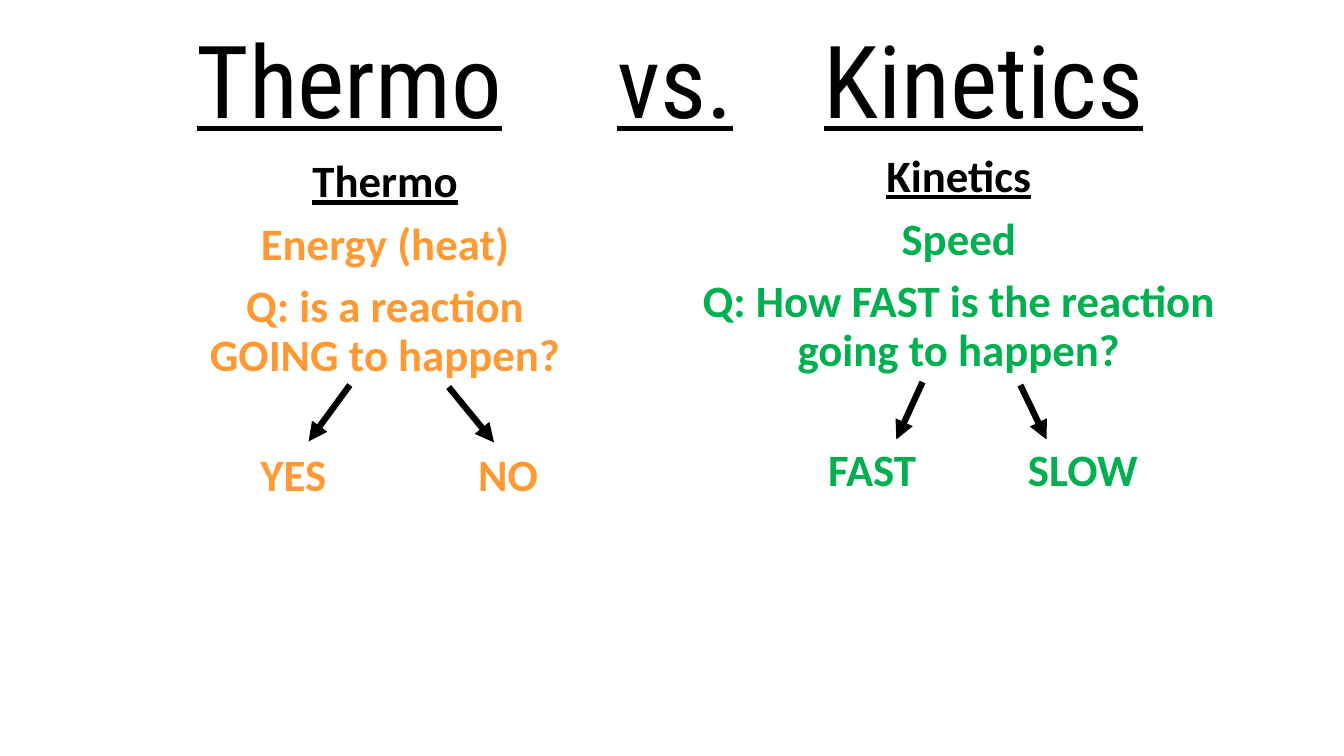
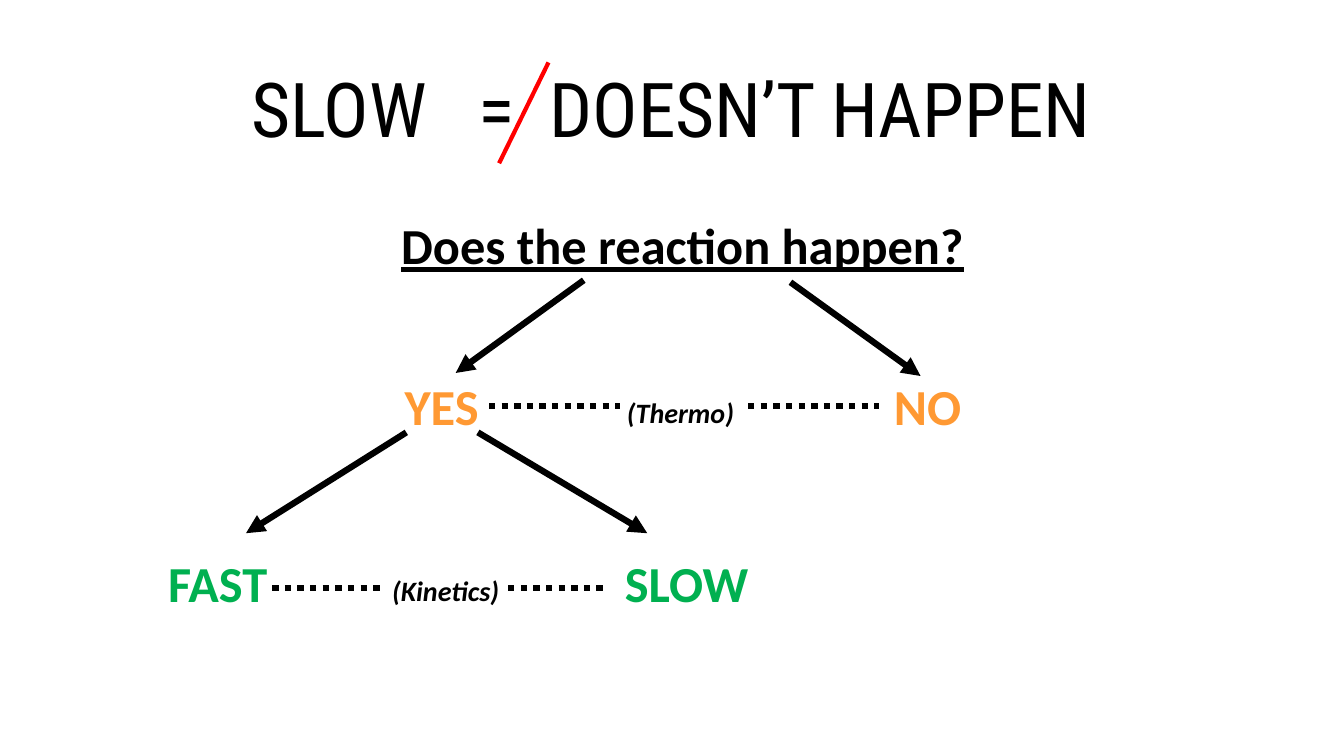
from dataclasses import dataclass

from lxml import etree
from pptx import Presentation
from pptx.dml.color import RGBColor
from pptx.enum.dml import MSO_LINE
from pptx.enum.shapes import MSO_CONNECTOR
from pptx.enum.text import MSO_ANCHOR, MSO_AUTO_SIZE, PP_ALIGN
from pptx.oxml.ns import qn
from pptx.presentation import Presentation as Deck
from pptx.slide import Slide
from pptx.util import Inches, Pt

CENTER = PP_ALIGN.CENTER
LEFT = PP_ALIGN.LEFT
MIDDLE = MSO_ANCHOR.MIDDLE
TOP = MSO_ANCHOR.TOP
NO_FIT = MSO_AUTO_SIZE.NONE
STRAIGHT = MSO_CONNECTOR.STRAIGHT
DOTS = MSO_LINE.ROUND_DOT

TITLE_FONT = "Roboto Condensed"
BODY_FONT = "Calibri"
BLACK = "000000"
ORANGE = "FF9933"
GREEN = "00B050"
RED = "FF0000"
TITLE_ONLY = 5
TITLE_HEIGHT = 1.45
LABEL_WIDTH = 2
LABEL_HEIGHT = 0.8


@dataclass(frozen=True)
class Label:
    """A short text centred on a point."""

    text: str
    x: float
    y: float
    color: str
    size: float
    italic: bool = False


@dataclass(frozen=True)
class Line:
    """A straight line, by default an arrow pointing at its end."""

    start: tuple[float, float]
    end: tuple[float, float]
    color: str = BLACK
    width: float = 4.5
    arrow: bool = True
    dotted: bool = False


@dataclass(frozen=True)
class Column:
    """A heading with statements below it."""

    heading: str
    statements: tuple[str, ...]
    color: str
    left: float
    top: float
    width: float


COLUMNS = (
    Column("Thermo", ("Energy (heat)", "Q: is a reaction GOING to happen?"),
           ORANGE, 1.75, 1.53, 4.14),
    Column("Kinetics", ("Speed", "Q: How FAST is the reaction going to happen?"),
           GREEN, 6.72, 1.48, 5.58),
)
COMPARISON_LABELS = (
    Label("YES", 2.91, 4.7, ORANGE, 32),
    Label("NO", 5.04, 4.7, ORANGE, 32),
    Label("FAST", 8.65, 4.65, GREEN, 32),
    Label("SLOW", 10.74, 4.65, GREEN, 32),
)
COMPARISON_LINES = (
    Line((3.47, 3.82), (3.06, 4.38)),
    Line((4.45, 3.84), (4.9, 4.39)),
    Line((9.15, 3.79), (8.89, 4.36)),
    Line((10.12, 3.82), (10.38, 4.36)),
)
TREE_LABELS = (
    Label("YES", 4.38, 4.02, ORANGE, 36),
    Label("(Thermo)", 6.75, 4.09, BLACK, 20, italic=True),
    Label("NO", 9.2, 4.02, ORANGE, 36),
    Label("FAST", 2.16, 5.78, GREEN, 36),
    Label("(Kinetics)", 4.42, 5.86, BLACK, 20, italic=True),
    Label("SLOW", 6.81, 5.78, GREEN, 36),
)
TREE_LINES = (
    Line((5.79, 2.78), (4.52, 3.7)),
    Line((7.84, 2.8), (9.13, 3.73)),
    Line((4.03, 4.29), (2.44, 5.29)),
    Line((4.74, 4.29), (6.42, 5.29)),
    Line((5.44, 0.62), (4.95, 1.62), color=RED, width=3, arrow=False),
    Line((4.85, 4.03), (6.15, 4.03), arrow=False, dotted=True),
    Line((7.42, 4.03), (8.72, 4.03), arrow=False, dotted=True),
    Line((2.7, 5.83), (3.8, 5.83), arrow=False, dotted=True),
    Line((5.04, 5.83), (6.04, 5.83), arrow=False, dotted=True),
)


def rgb(color: str) -> RGBColor:
    """Turn a hex string into a colour."""
    return RGBColor.from_string(color)


def write(paragraph, text: str, *, size: float, color: str = BLACK,
          font: str = BODY_FONT, bold: bool = True, italic: bool = False,
          underline: bool = False, align=CENTER, line_spacing: float = 0.9,
          space_before: float = 0) -> None:
    """Fill a paragraph with one formatted run."""
    paragraph.alignment = align
    paragraph.line_spacing = line_spacing
    paragraph.space_before = Pt(space_before)
    run = paragraph.add_run()
    run.text = text
    run.font.name = font
    run.font.size = Pt(size)
    run.font.bold = bold
    run.font.italic = italic
    run.font.underline = underline
    run.font.color.rgb = rgb(color)


def add_title(slide: Slide, parts: tuple[str, ...], stops: tuple[float, ...], *,
              left: float, top: float, width: float, size: float,
              underline: bool = False) -> None:
    """Set the title, with its parts aligned on tab stops."""
    title = slide.shapes.title
    title.left, title.top = Inches(left), Inches(top)
    title.width, title.height = Inches(width), Inches(TITLE_HEIGHT)
    frame = title.text_frame
    frame.auto_size = NO_FIT
    frame.vertical_anchor = MIDDLE
    paragraph = frame.paragraphs[0]
    write(paragraph, "\t".join(parts), size=size, font=TITLE_FONT, bold=False,
          underline=underline, align=LEFT)
    properties = paragraph._p.get_or_add_pPr()
    tab_list = etree.SubElement(properties, qn("a:tabLst"))
    for stop in stops:
        etree.SubElement(tab_list, qn("a:tab"), pos=str(Inches(stop)), algn="l")


def add_frame(slide: Slide, left: float, top: float, width: float,
              height: float, anchor=TOP):
    """Add a wrapping text box and return its text frame."""
    box = slide.shapes.add_textbox(Inches(left), Inches(top),
                                   Inches(width), Inches(height))
    frame = box.text_frame
    frame.word_wrap = True
    frame.vertical_anchor = anchor
    return frame


def add_column(slide: Slide, column: Column) -> None:
    """Draw a heading and its statements in one text box."""
    frame = add_frame(slide, column.left, column.top, column.width, 2.3)
    write(frame.paragraphs[0], column.heading, size=32, underline=True,
          space_before=10)
    for statement in column.statements:
        write(frame.add_paragraph(), statement, size=32, color=column.color,
              space_before=10)


def add_label(slide: Slide, label: Label) -> None:
    """Draw a label around its centre."""
    frame = add_frame(slide, label.x - LABEL_WIDTH / 2,
                      label.y - LABEL_HEIGHT / 2, LABEL_WIDTH, LABEL_HEIGHT, MIDDLE)
    write(frame.paragraphs[0], label.text, size=label.size, color=label.color,
          italic=label.italic, line_spacing=1)


def add_line(slide: Slide, line: Line) -> None:
    """Draw a line with its dots or arrowhead."""
    points = [Inches(value) for value in (*line.start, *line.end)]
    connector = slide.shapes.add_connector(STRAIGHT, *points)
    connector.line.color.rgb = rgb(line.color)
    connector.line.width = Pt(line.width)
    if line.dotted:
        connector.line.dash_style = DOTS
    properties = connector._element.spPr
    if line.arrow:
        outline = properties.find(qn("a:ln"))
        etree.SubElement(outline, qn("a:tailEnd"), type="triangle")
    etree.SubElement(properties, qn("a:effectLst"))


def add_diagram(slide: Slide, labels: tuple[Label, ...],
                lines: tuple[Line, ...]) -> None:
    """Draw the labels and the lines between them."""
    for label in labels:
        add_label(slide, label)
    for line in lines:
        add_line(slide, line)


def new_slide(presentation: Deck) -> Slide:
    """Add a slide with only a title."""
    return presentation.slides.add_slide(presentation.slide_layouts[TITLE_ONLY])


def build_comparison(presentation: Deck) -> None:
    """Build the slide that compares the two questions."""
    slide = new_slide(presentation)
    add_title(slide, ("Thermo", "vs.", "Kinetics"), (4.17, 6.22),
              left=1.85, top=0.13, width=10.57, size=72, underline=True)
    for column in COLUMNS:
        add_column(slide, column)
    add_diagram(slide, COMPARISON_LABELS, COMPARISON_LINES)


def build_tree(presentation: Deck) -> None:
    """Build the slide with the decision tree."""
    slide = new_slide(presentation)
    add_title(slide, ("SLOW", "=", "DOESN’T HAPPEN"), (2.26, 2.96),
              left=2.39, top=0.4, width=10.03, size=54)
    heading = add_frame(slide, 2.7, 2.14, 8.14, 0.7)
    write(heading.paragraphs[0], "Does the reaction happen?", size=36,
          underline=True, space_before=10)
    add_diagram(slide, TREE_LABELS, TREE_LINES)


def main() -> None:
    """Build and save the presentation."""
    presentation = Presentation()
    presentation.slide_width = Inches(13.33)
    presentation.slide_height = Inches(7.5)
    build_comparison(presentation)
    build_tree(presentation)
    presentation.save("out.pptx")


if __name__ == "__main__":
    main()
